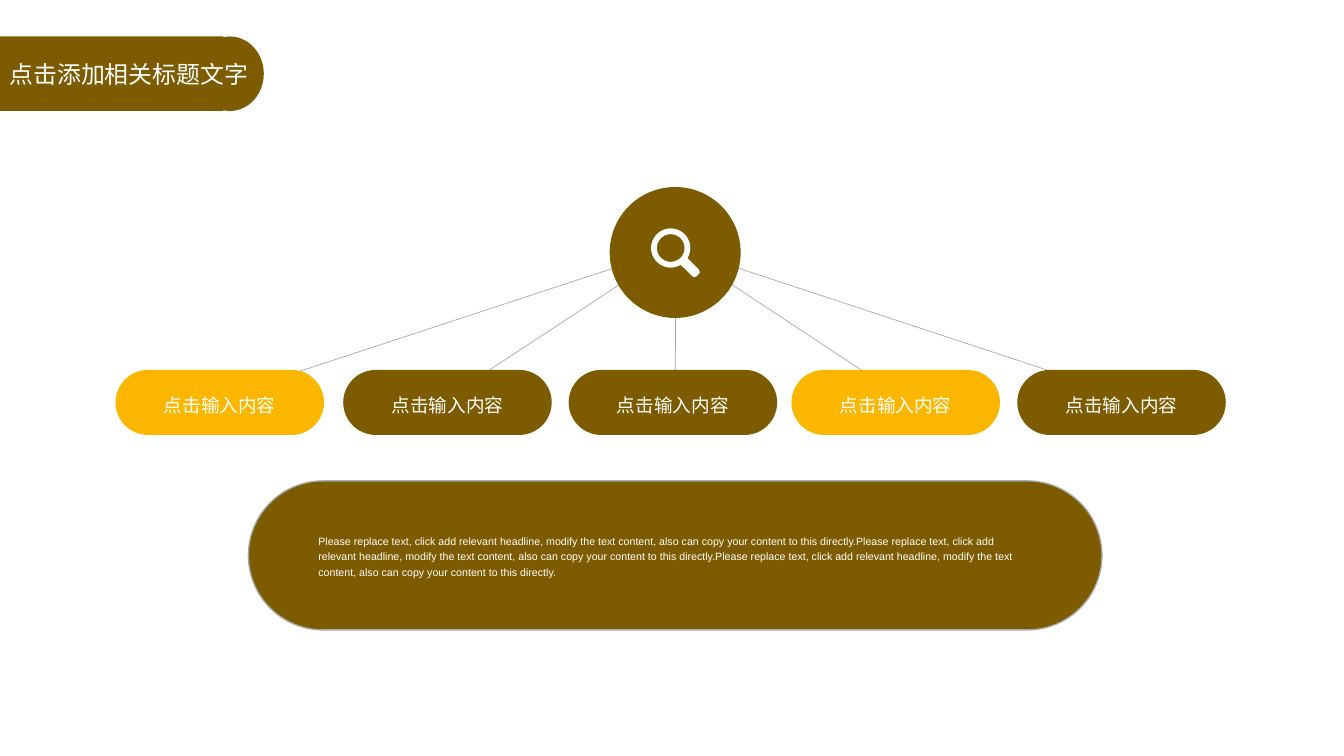
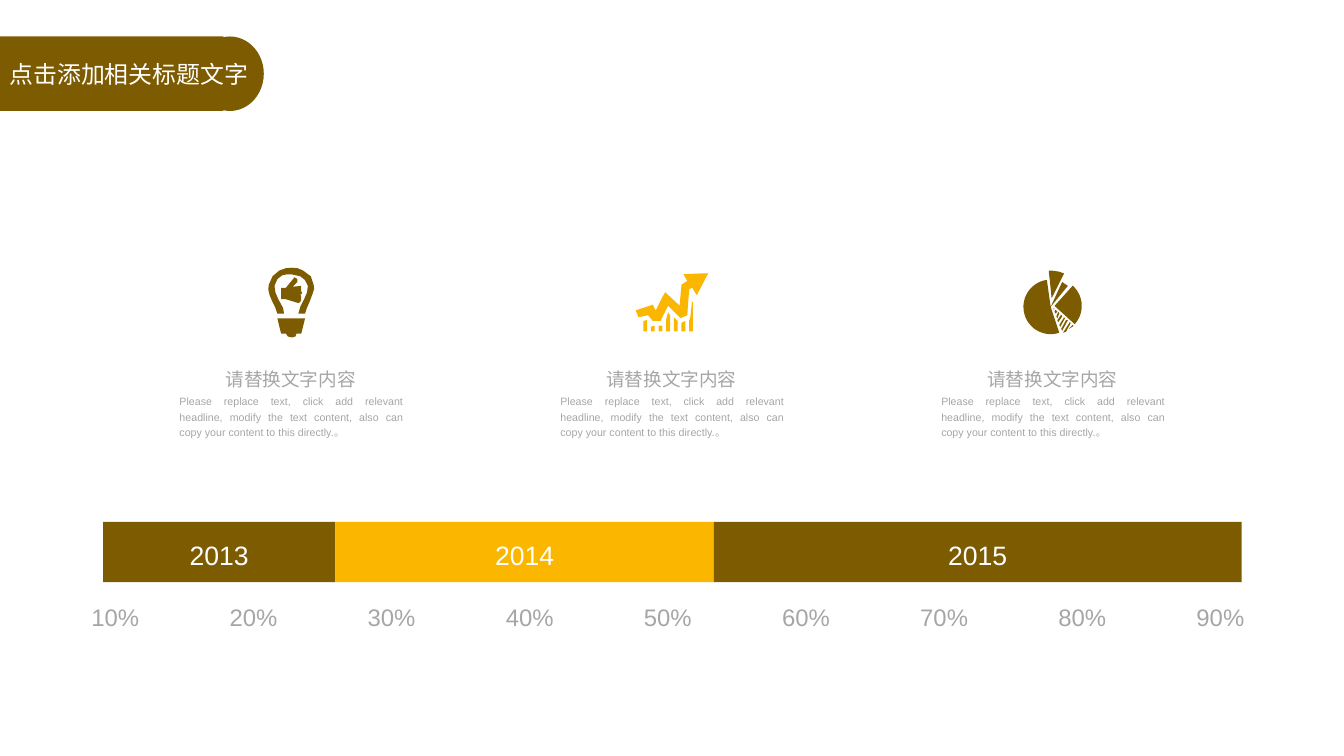
from math import cos, radians, sin

from pptx import Presentation
from pptx.dml import color
from pptx.enum import shapes, text
from pptx.util import Cm, Pt

BROWN, GOLD, GREY, WHITE = "7D5B00", "FBB600", "A6A6A6", "FFFFFF"
SANS, HAN = "Arial", "Noto Sans CJK SC"
KIND = shapes.MSO_SHAPE
ALIGN = text.PP_ALIGN
MID, TOP = text.MSO_ANCHOR.MIDDLE, text.MSO_ANCHOR.TOP
GRID = 10
BODY = ("Please replace text, click add relevant headline, modify the text "
        "content, also can copy your content to this directly.")


def arc(x, y, r, start, end, steps=40):
    turns = [radians(start + (end - start) * i / steps) for i in range(steps + 1)]
    return [(x + r * cos(t), y + r * sin(t)) for t in turns]


LENS = [
    arc(20.5, 20.5, 20.5, 59, 391)
    + [(50, 43), (51, 46), (48, 50), (45, 51), (43, 50)],
    arc(20.5, 20.5, 14.5, 0, 360),
]
BULB = [
    [(11, 54), (40, 54), (36, 70), (31, 70), (30, 73), (26, 74), (22, 73),
     (20, 70), (15, 70)],
    [(36, 20), (36, 26), (37, 27), (36, 29), (35, 29), (36, 31), (36, 33),
     (35, 34), (36, 34), (35, 37), (33, 38), (20, 34), (15, 34), (15, 22),
     (20, 22), (29, 11), (32, 13), (32, 16), (27, 21)],
    [(11, 49), (18, 49), (17, 43), (12, 34), (9, 27), (8, 20), (11, 13),
     (16, 9), (21, 8), (26, 8), (35, 10), (40, 14), (43, 20), (42, 27),
     (39, 34), (35, 42), (33, 49), (40, 49), (42, 43), (45, 36), (48, 28),
     (49.5, 23), (49, 19), (46, 10), (38, 4), (32, 1.5), (26, 1), (20, 1.5),
     (13, 4), (6, 10), (2, 19), (1.5, 24), (3, 30), (6, 37), (9, 43)],
]
GROWTH = [
    [(76, 0), (64, 23), (59, 15), (56, 17), (54, 44), (47, 47), (34, 34),
     (26, 50), (18, 50), (13, 44), (3, 46), (0, 39), (18, 33), (21, 39),
     (28, 25), (31, 20), (46, 34), (48, 12), (54, 8), (50, 1)],
    [(8, 61), (12, 61), (12, 49), (8, 50)],
    [(16, 61), (20, 61), (20, 55), (16, 56)],
    [(24, 61), (28, 61), (28, 55), (24, 55)],
    [(32, 61), (36, 61), (36, 44), (34, 41), (32, 48)],
    [(40, 61), (44, 61), (44, 50), (40, 46)],
    [(48, 61), (52, 61), (52, 50), (48, 52)],
    [(56, 61), (60, 61), (60, 30), (59, 30), (57, 48), (56, 49)],
]
PIE = [
    [(29, 38)] + arc(29, 38, 28.5, 71.5, 262),
    [(29, 38), (41, 12), (47, 16)],
    [(33, 37)] + arc(33, 37, 28.5, -48, 42),
    [(30, 29), (27, 0), (30, 0), (37, 1), (43, 3)],
    [(53, 58), (48, 61), (52, 57)],
    [(45, 64), (50, 55), (49, 54), (42, 65)],
    [(41, 63), (47, 52), (45, 52), (40, 61)],
    [(39, 59), (44, 50), (43, 49), (38, 57)],
    [(37, 54), (41, 48), (40, 46), (36, 52)],
    [(36, 50), (38, 45), (37, 43), (35, 48)],
    [(34, 45), (36, 43), (34, 41), (33, 43)],
    [(32, 41), (32, 39), (33, 40)],
]


def tone(code):
    return color.RGBColor.from_string(code)


def paint(shape, fill, edge=None):
    shape.shadow.inherit = False
    shape.fill.solid()
    shape.fill.fore_color.rgb = tone(fill)
    if edge:
        shape.line.color.rgb = tone(edge)
        shape.line.width = Pt(1)
    else:
        shape.line.fill.background()


def block(slide, kind, x, y, w, h, fill, edge=None):
    shape = slide.shapes.add_shape(kind, Cm(x), Cm(y), Cm(w), Cm(h))
    paint(shape, fill, edge)
    if kind == KIND.ROUNDED_RECTANGLE:
        shape.adjustments[0] = 0.5
    return shape


def write(shape, words, size, tint, align=ALIGN.CENTER, lead=1.2, gap=0,
          font=SANS, anchor=MID):
    frame = shape.text_frame
    frame.text = words
    frame.vertical_anchor = anchor
    line = frame.paragraphs[0]
    line.alignment = align
    line.line_spacing = lead
    line.space_before = Pt(gap)
    style = line.runs[0].font
    style.size = Pt(size)
    style.name = font
    style.color.rgb = tone(tint)


def label(slide, x, y, w, h, words, size, tint, wrap=False, **look):
    box = slide.shapes.add_textbox(Cm(x), Cm(y), Cm(w), Cm(h))
    box.text_frame.word_wrap = wrap
    write(box, words, size, tint, anchor=TOP, **look)


def ray(slide, x, y, end, low):
    line = slide.shapes.add_connector(
        shapes.MSO_CONNECTOR.STRAIGHT, Cm(x), Cm(y), Cm(end), Cm(low))
    line.line.color.rgb = tone(GREY)
    line.line.width = Pt(0.5)
    props = line._element.spPr
    props.append(props.makeelement(
        "{http://schemas.openxmlformats.org/drawingml/2006/main}effectLst", {}))


def icon(slide, rings, x, y, tint):
    pen = None
    for ring in rings:
        first, *rest = [(px * GRID, py * GRID) for px, py in ring]
        if pen is None:
            pen = slide.shapes.build_freeform(*first, scale=Cm(0.0254) / GRID)
        else:
            pen.move_to(*first)
        pen.add_line_segments(rest, close=True)
    paint(pen.convert_to_shape(Cm(x), Cm(y)), tint)


def page(deck):
    slide = deck.slides.add_slide(deck.slide_layouts[6])
    block(slide, KIND.RECTANGLE, 0, 0.97, 5.94, 1.98, BROWN)
    block(slide, KIND.OVAL, 5.21, 0.97, 1.8, 1.98, BROWN)
    label(slide, 0, 1.45, 7.01, 1.02, "点击添加相关标题文字", 18, WHITE,
          wrap=True, align=ALIGN.LEFT, lead=1, font=HAN)
    return slide


def hub(deck):
    slide = page(deck)
    for i in range(5):
        ray(slide, 17.96, 6.58, 5.82 + 6.06 * i, 10.57)
    pills = [(3.07, GOLD), (9.12, BROWN), (15.11, BROWN), (21.03, GOLD),
             (27.03, BROWN)]
    for x, fill in pills:
        pill = block(slide, KIND.ROUNDED_RECTANGLE, x, 9.83, 5.54, 1.73, fill)
        write(pill, "点击输入内容", 14, WHITE, gap=10)
    panel = block(slide, KIND.ROUNDED_RECTANGLE, 6.6, 12.78, 22.68, 3.96,
                  BROWN, "A6AAA9")
    panel.text_frame.margin_left = Cm(1.28)
    panel.text_frame.margin_right = Cm(1.5)
    write(panel, BODY * 3, 8, WHITE, align=ALIGN.LEFT, gap=10)
    block(slide, KIND.OVAL, 16.2, 4.97, 3.48, 3.48, BROWN)
    icon(slide, LENS, 17.3, 6.07, WHITE)


def years(deck):
    slide = page(deck)
    for i in range(9):
        label(slide, 2.18 + 3.67 * i, 15.75, 1.8, 1.09, f"{10 * (i + 1)}%",
              18, GREY, align=ALIGN.LEFT)
    x = 2.74
    bars = [("2013", 6.17, BROWN), ("2014", 10.06, GOLD), ("2015", 14.02, BROWN)]
    for year, w, fill in bars:
        bar = block(slide, KIND.RECTANGLE, x, 13.87, w, 1.6, fill)
        write(bar, year, 20, WHITE)
        x += w
    icons = [(BULB, 7.09, 7.09, BROWN), (GROWTH, 16.89, 7.26, GOLD),
             (PIE, 27.18, 7.19, BROWN)]
    for i, art in enumerate(icons):
        left = 4.52 + 10.12 * i
        icon(slide, *art)
        label(slide, left + 1.22, 9.53, 4.01, 0.91, "请替换文字内容", 14, GREY,
              align=ALIGN.LEFT)
        label(slide, left, 10.31, 6.45, 1.5, BODY + "。", 8, GREY, wrap=True,
              align=ALIGN.JUSTIFY)


def main():
    deck = Presentation()
    deck.slide_width, deck.slide_height = Cm(35.71), Cm(20.09)
    hub(deck)
    years(deck)
    deck.save("out.pptx")


if __name__ == "__main__":
    main()
